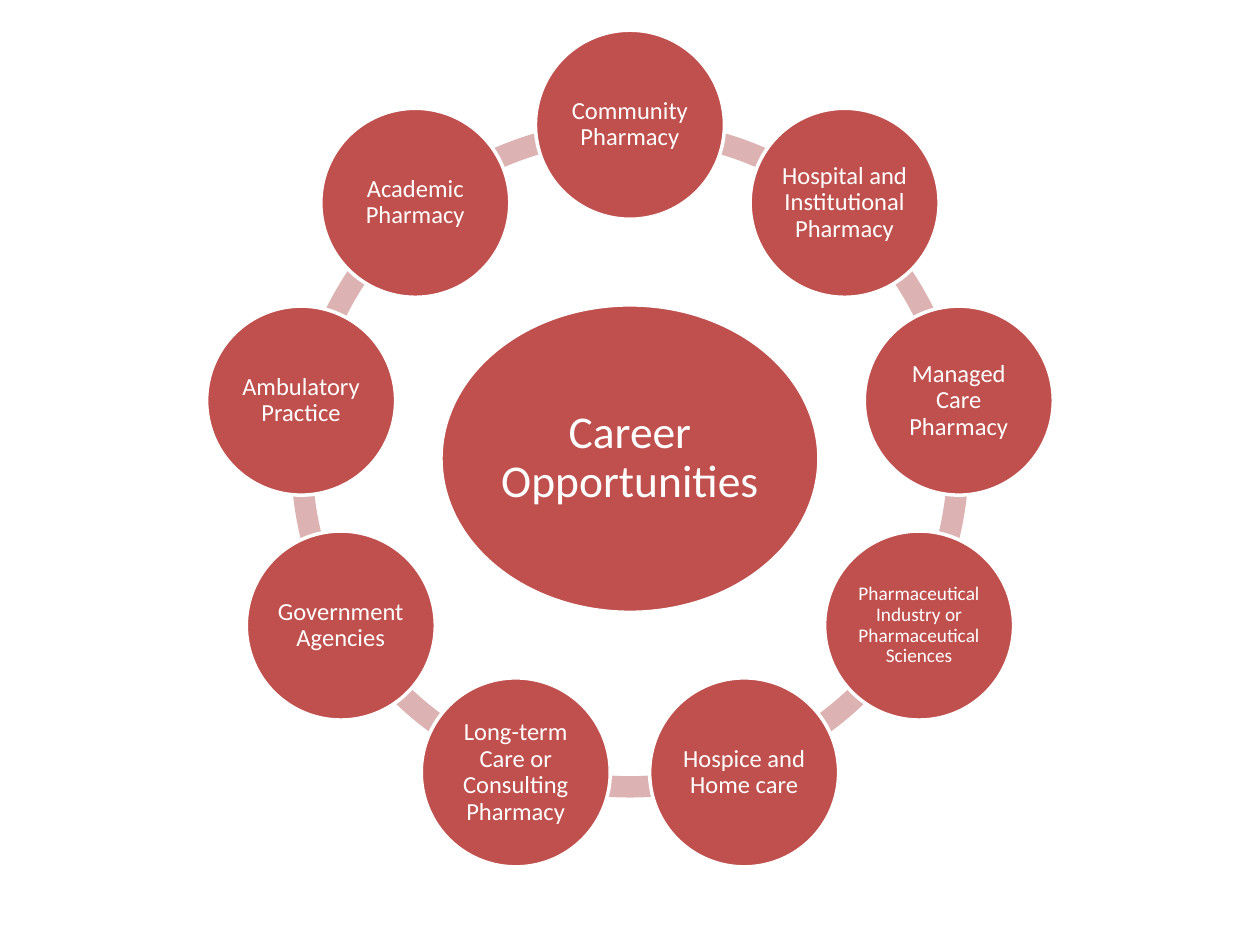
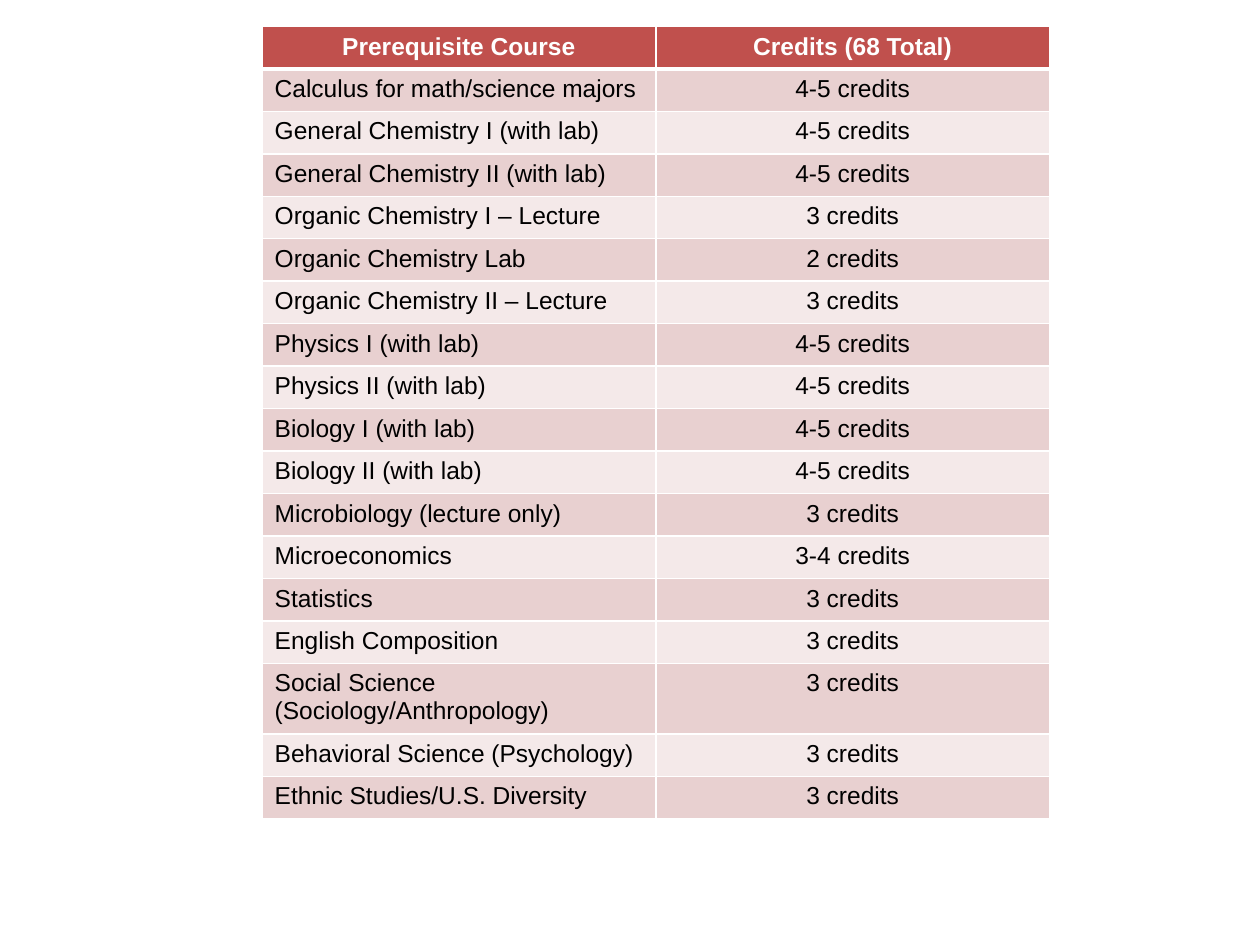
"""Builds two slides: a ring of pharmacy careers and a table of prerequisite courses."""
from dataclasses import dataclass
from math import cos, radians, sin

from lxml import etree
from pptx import Presentation
from pptx.dml.color import RGBColor
from pptx.enum.shapes import MSO_SHAPE as SHAPE
from pptx.enum.text import MSO_ANCHOR as ANCHOR, PP_ALIGN as ALIGN
from pptx.oxml.ns import qn
from pptx.util import Inches, Pt

HUB = "Career Opportunities"
CAREERS = [
    "Community Pharmacy",
    "Hospital and Institutional Pharmacy",
    "Managed Care Pharmacy",
    "Pharmaceutical Industry or Pharmaceutical Sciences",
    "Hospice and Home care",
    "Long-term Care or Consulting Pharmacy",
    "Government Agencies",
    "Ambulatory Practice",
    "Academic Pharmacy",
]
COURSES = [
    ("Prerequisite Course", "Credits (68 Total)"),
    ("Calculus for math/science majors", "4-5 credits"),
    ("General Chemistry I (with lab)", "4-5 credits"),
    ("General Chemistry II (with lab)", "4-5 credits"),
    ("Organic Chemistry I – Lecture", "3 credits"),
    ("Organic Chemistry Lab", "2 credits"),
    ("Organic Chemistry II – Lecture", "3 credits"),
    ("Physics I (with lab)", "4-5 credits"),
    ("Physics II (with lab)", "4-5 credits"),
    ("Biology I (with lab)", "4-5 credits"),
    ("Biology II (with lab)", "4-5 credits"),
    ("Microbiology (lecture only)", "3 credits"),
    ("Microeconomics", "3-4 credits"),
    ("Statistics", "3 credits"),
    ("English Composition", "3 credits"),
    ("Social Science (Sociology/Anthropology)", "3 credits"),
    ("Behavioral Science (Psychology)", "3 credits"),
    ("Ethnic Studies/U.S. Diversity", "3 credits"),
]


@dataclass(frozen=True)
class Theme:
    red: str = "C0504D"
    ring: str = "DCB3B2"
    bands: tuple = ("F4E9E9", "E8D0D0")
    white: str = "FFFFFF"
    black: str = "000000"
    ring_font: str = "Calibri"
    table_font: str = "Arial"
    hub_size: int = 26
    body_size: int = 14
    small_size: int = 11


T = Theme()
CX, CY = 5, 3.64
ORBIT, RING_SIZE, RING_WIDTH = 2.65, 5.38, 0.17
BUBBLE, HUB_W, HUB_H = 1.5, 3, 2.44
LONG_TEXT = 40
TABLE_H, TALL_ROW_H = 6.29, 0.56
ROW_H = (TABLE_H - TALL_ROW_H) / (len(COURSES) - 1)
WRAP_LENGTH = 35


def rgb(color):
    return RGBColor.from_string(color)


def write(tf, text, *, font, size=T.body_size, color=T.white, bold=False,
          align=ALIGN.CENTER, spacing=1.0):
    tf.word_wrap = True
    p = tf.paragraphs[0]
    p.alignment, p.line_spacing = align, spacing
    r = p.add_run()
    r.text = text
    r.font.name, r.font.size, r.font.bold = font, Pt(size), bold
    r.font.color.rgb = rgb(color)


def add_centred(s, kind, x, y, w, h, fill):
    sp = s.shapes.add_shape(kind, Inches(x - w / 2), Inches(y - h / 2), Inches(w), Inches(h))
    sp.shadow.inherit = False
    sp.fill.solid()
    sp.fill.fore_color.rgb = rgb(fill)
    sp.line.fill.background()
    return sp


def add_bubble(s, text, x, y, w, h, size, inset=0.02):
    sp = add_centred(s, SHAPE.OVAL, x, y, w, h, T.red)
    sp.line.color.rgb = rgb(T.white)
    sp.line.width = Pt(2)
    tf = sp.text_frame
    tf.margin_left = tf.margin_right = tf.margin_top = tf.margin_bottom = Inches(inset)
    tf.vertical_anchor = ANCHOR.MIDDLE
    write(tf, text, font=T.ring_font, size=size, spacing=0.9)


def add_career_ring(s):
    step = 360 / len(CAREERS)
    angles = [270 + step * i for i in range(len(CAREERS))]
    for angle in reversed(angles):
        arc = add_centred(s, SHAPE.BLOCK_ARC, CX, CY, RING_SIZE, RING_SIZE, T.ring)
        ends = (angle % 360, (angle + step) % 360)
        for i, value in enumerate([end * 0.6 for end in ends] + [RING_WIDTH / RING_SIZE]):
            arc.adjustments[i] = value
    add_bubble(s, HUB, CX, CY, HUB_W, HUB_H, T.hub_size, inset=0)
    for career, angle in zip(CAREERS, map(radians, angles)):
        size = T.small_size if len(career) > LONG_TEXT else T.body_size
        add_bubble(s, career, CX + ORBIT * cos(angle), CY + ORBIT * sin(angle),
                   BUBBLE, BUBBLE, size)


def add_border(cell, side, width):
    ln = etree.Element(qn(f"a:{side}"), w=str(Pt(width)))
    fill = etree.SubElement(ln, qn("a:solidFill"))
    etree.SubElement(fill, qn("a:srgbClr"), val=T.white)
    cell._tc.get_or_add_tcPr().insert(0, ln)


def add_course_table(s):
    heights = [TALL_ROW_H if len(course) > WRAP_LENGTH else ROW_H for course, _ in COURSES]
    table = s.shapes.add_table(len(COURSES), 2, Inches(2.08), Inches(0.21),
                               Inches(6.25), Inches(TABLE_H)).table
    for i, (row, height) in enumerate(zip(COURSES, heights)):
        table.rows[i].height = Inches(height)
        head = i == 0
        for j, text in enumerate(row):
            cell = table.cell(i, j)
            cell.fill.solid()
            cell.fill.fore_color.rgb = rgb(T.red if head else T.bands[i % 2])
            if head:
                add_border(cell, "lnB", 3)
            write(cell.text_frame, text, font=T.table_font, bold=head,
                  color=T.white if head else T.black,
                  align=ALIGN.CENTER if head or j else ALIGN.LEFT)


def main():
    prs = Presentation()
    prs.slide_width, prs.slide_height = Inches(10), Inches(7.5)
    for build in (add_career_ring, add_course_table):
        build(prs.slides.add_slide(prs.slide_layouts[6]))
    prs.save("out.pptx")


if __name__ == "__main__":
    main()
